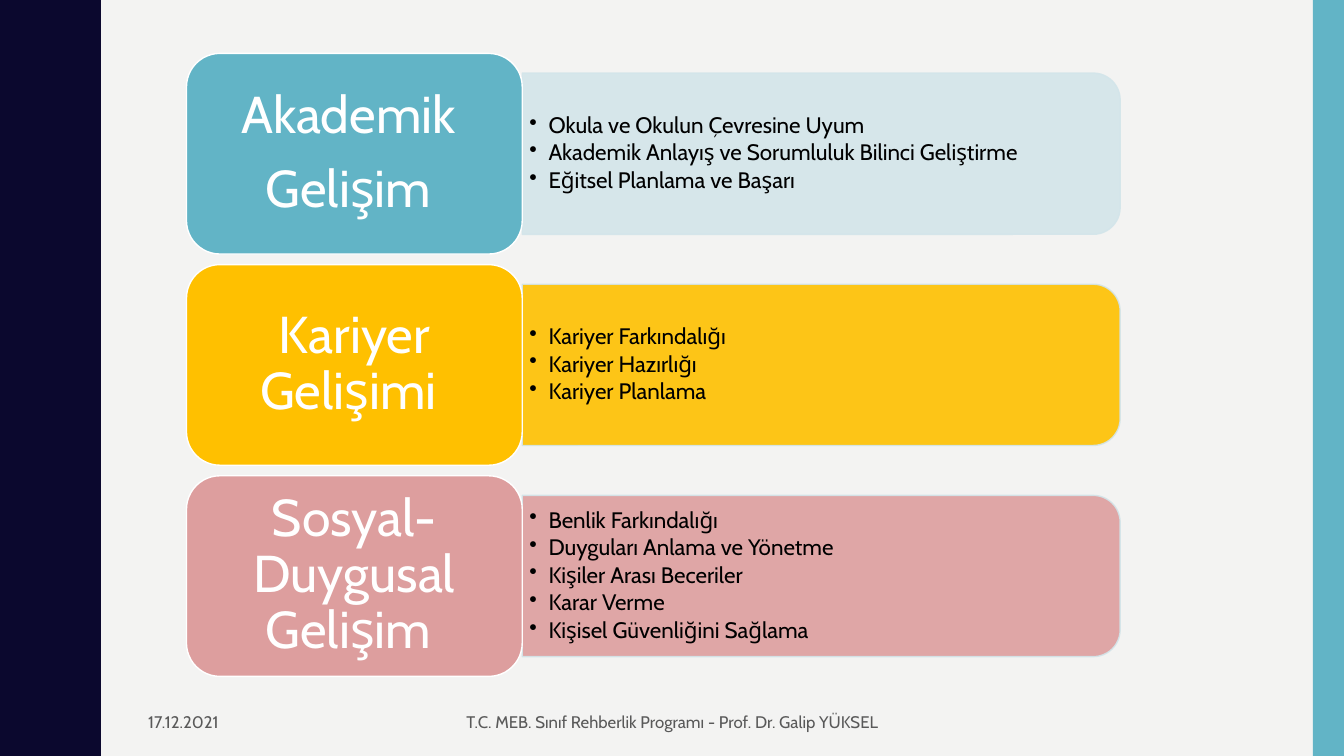
from pptx import Presentation
from pptx.dml.color import RGBColor
from pptx.enum.shapes import MSO_SHAPE
from pptx.enum.text import MSO_ANCHOR, PP_ALIGN
from pptx.oxml.ns import qn
from pptx.util import Inches, Pt
from lxml.etree import SubElement

HUES = {"back": "F3F3F2", "navy": "0B082E", "teal": "62B4C6", "pale": "D3E5EA",
        "gold": "FFC000", "rose": "DD9E9E", "white": "FFFFFF", "black": "000000",
        "gray": "595959"}
WAVE = [(0, .78), (.07, .78), (.14, .79), (.2, .8), (.25, .81), (.29, .83), (.33, .85),
        (.38, .87), (.42, .89), (.46, .91), (.5, .93), (.55, .95), (.61, .96), (.68, .97),
        (.75, .97)]
AREAS = [
    (["Akademik ", "Gelişim "], "teal", "pale",
     ["Okula ve Okulun Çevresine Uyum",
      "Akademik Anlayış ve Sorumluluk Bilinci Geliştirme",
      "Eğitsel Planlama ve Başarı"]),
    (["Kariyer Gelişimi "], "gold", "gold",
     ["Kariyer Farkındalığı", "Kariyer Hazırlığı", "Kariyer Planlama"]),
    (["Sosyal- Duygusal Gelişim "], "rose", "rose",
     ["Benlik Farkındalığı", "Duyguları Anlama ve Yönetme", "Kişiler Arası Beceriler",
      "Karar Verme", "Kişisel Güvenliğini Sağlama"]),
]


def tint(hue):
    """Return the named colour."""
    return RGBColor.from_string(HUES[hue])


def paint(shape, fill, line=None, alpha=None):
    """Fill and outline a shape, with optional opacity in percent."""
    shape.shadow.inherit = False
    shape.fill.solid()
    shape.fill.fore_color.rgb = tint(fill)
    if line:
        shape.line.color.rgb = tint(line)
        shape.line.width = Pt(1)
    else:
        shape.line.fill.background()
    if alpha:
        for clr in shape._element.spPr.iter(qn("a:srgbClr")):
            SubElement(clr, qn("a:alpha")).set("val", str(alpha * 1000))


def form(slide, kind, left, top, wide, high):
    """Add a preset shape placed in inches."""
    return slide.shapes.add_shape(kind, Inches(left), Inches(top), Inches(wide), Inches(high))


def write(slide, lines, left, top, wide, high, size=12, hue="gray", align=PP_ALIGN.LEFT,
          pad=(.1, .05), lead=None, after=0, dots=False):
    """Add a text box with one paragraph per line."""
    frame = slide.shapes.add_textbox(
        Inches(left), Inches(top), Inches(wide), Inches(high)).text_frame
    frame.word_wrap = True
    frame.vertical_anchor = MSO_ANCHOR.MIDDLE
    frame.margin_left = frame.margin_right = Inches(pad[0])
    frame.margin_top = frame.margin_bottom = Inches(pad[1])
    for i, line in enumerate(lines):
        para = frame.paragraphs[0] if i == 0 else frame.add_paragraph()
        para.alignment = align
        para.line_spacing = lead
        para.space_after = Pt(after)
        run = para.add_run()
        run.text = line
        run.font.name = "Cabin"
        run.font.size = Pt(size)
        run.font.color.rgb = tint(hue)
        if dots:
            props = para._p.get_or_add_pPr()
            props.set("marL", str(Inches(.19)))
            props.set("indent", str(-Inches(.19)))
            SubElement(props, qn("a:buChar")).set("char", "•")


def frame_sides(slide, wide, high):
    """Draw the wavy left edge and the right band."""
    turn = [(1.5 - y, x) for y, x in WAVE[-2::-1]]
    edge = [(x, y + 1.5 * n) for n in range(5) for y, x in WAVE + turn]
    pen = slide.shapes.build_freeform(0, 0, scale=Inches(1))
    pen.add_line_segments(edge + [(0, high)], close=True)
    paint(pen.convert_to_shape(), "navy")
    paint(form(slide, MSO_SHAPE.RECTANGLE, wide - .31, 0, .31, high), "teal")


def area_row(slide, left, top, area):
    """Draw one area: a panel of points behind a title card."""
    title, hue, soft, points = area
    card, high, long, deep = 3.33, 1.99, 5.93, 1.6
    mid = top + high / 2
    panel = form(slide, MSO_SHAPE.ROUND_2_SAME_RECTANGLE,
                 left + card + (long - deep) / 2, mid - long / 2, deep, long)
    panel.rotation = 90
    paint(panel, soft, "pale", 90)
    write(slide, points, left + card, mid - .72, 5.85, 1.44, size=16, hue="black",
          pad=(.07, .03), lead=.9, after=2.4, dots=True)
    paint(form(slide, MSO_SHAPE.ROUNDED_RECTANGLE, left, top, card, high), hue, "white")
    write(slide, title, left + .1, top + .1, card - .2, high - .2, size=37, hue="white",
          align=PP_ALIGN.CENTER, pad=(.15, .08), lead=.9, after=13)


def footer(slide, left, top):
    """Write the date and the centred footer."""
    write(slide, ["17.12.2021"], left, top, 2.55, .38)
    write(slide, ["T.C. MEB. Sınıf Rehberlik Programı - Prof. Dr. Galip YÜKSEL"],
          left + 3.05, top, 4.5, .38, align=PP_ALIGN.CENTER)


def main():
    """Build and save the slide."""
    deck = Presentation()
    deck.slide_width, deck.slide_height = Inches(13.33), Inches(7.5)
    slide = deck.slides.add_slide(deck.slide_layouts[6])
    slide.background.fill.solid()
    slide.background.fill.fore_color.rgb = tint("back")
    frame_sides(slide, 13.33, 7.5)
    for i, area in enumerate(AREAS):
        area_row(slide, 1.85, .53 + 2.095 * i, area)
    footer(slide, 1.37, 6.97)
    deck.save("out.pptx")


if __name__ == "__main__":
    main()
